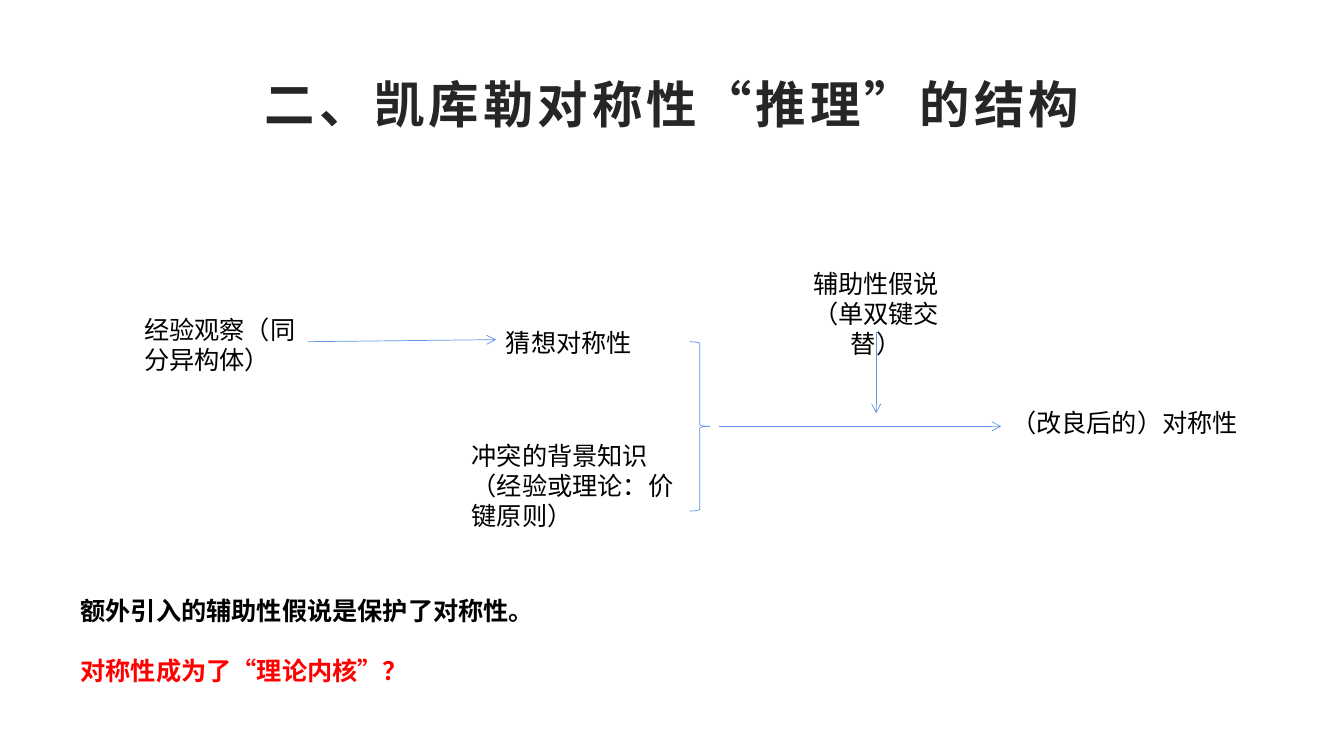
from lxml import etree
from pptx import Presentation
from pptx.dml.color import RGBColor
from pptx.enum.shapes import MSO_CONNECTOR, MSO_SHAPE
from pptx.enum.text import MSO_ANCHOR, PP_ALIGN
from pptx.oxml.ns import qn
from pptx.util import Inches, Pt

LEFT, CENTER = PP_ALIGN.LEFT, PP_ALIGN.CENTER
TOP, MIDDLE = MSO_ANCHOR.TOP, MSO_ANCHOR.MIDDLE
STRAIGHT = MSO_CONNECTOR.STRAIGHT
RIGHT_BRACE = MSO_SHAPE.RIGHT_BRACE

COLORS = {"title": "262626", "text": "000000", "accent": "FF0000", "line": "6096E6"}
EAST_ASIAN_FONT = "Noto Sans CJK SC"
SLIDE_SIZE = (13.33, 7.5)
LINE_WIDTH = 0.5
LINE_HEIGHT = 21.5

TITLE = ("二、凯库勒对称性“推理”的结构", (0.67, 0.64, 12, 0.77))
STEPS = [
    ("经验观察（同分异构体）", (1.33, 3.04, 1.72, 0.71), LEFT),
    ("猜想对称性", (4.92, 3.17, 2.25, 0.4), LEFT),
    ("冲突的背景知识（经验或理论：价键原则）", (4.58, 4.29, 2.25, 1.01), LEFT),
    ("辅助性假说（单双键交替）", (7.8, 2.58, 1.78, 0.71), CENTER),
    ("（改良后的）对称性", (9.93, 3.96, 2.5, 0.4), LEFT),
]
CONCLUSIONS = [
    ("额外引入的辅助性假说是保护了对称性。", "text"),
    ("对称性成为了“理论内核”？", "accent"),
]
CONCLUSION_BOX = (0.7, 5.83, 11.94, 1.01)
ARROWS = [
    ((3.05, 3.39), (4.92, 3.37)),
    ((7.13, 4.23), (9.93, 4.23)),
    ((8.69, 3.29), (8.69, 4.1)),
]
BRACE_BOX = (6.84, 3.39, 0.2, 1.68)

TITLE_FONT = {"name": "Arial", "size": Pt(36), "bold": True}
STEP_FONT = {"name": "Times New Roman", "size": Pt(18), "bold": False}
CONCLUSION_FONT = {"name": EAST_ASIAN_FONT, "size": Pt(18), "bold": True}
BODY_FRAME = {"word_wrap": True, "vertical_anchor": TOP,
              "margin_top": Inches(0.08), "margin_bottom": Inches(0.02)}
TITLE_FRAME = {"word_wrap": True, "vertical_anchor": MIDDLE}
BODY_PARAGRAPH = {"line_spacing": Pt(LINE_HEIGHT)}


def apply(target, values):
    for name, value in values.items():
        setattr(target, name, value)


def inches(values):
    return [Inches(value) for value in values]


def add_text(slide, box, lines, font, frame_format, paragraph_format):
    frame = slide.shapes.add_textbox(*inches(box)).text_frame
    apply(frame, frame_format)
    runs = []
    for index, (text, color) in enumerate(lines):
        paragraph = frame.add_paragraph() if index else frame.paragraphs[0]
        apply(paragraph, paragraph_format)
        if index:
            paragraph.space_before = Pt(LINE_HEIGHT)
        run = paragraph.add_run()
        run.text = text
        apply(run.font, font)
        run.font.color.rgb = RGBColor.from_string(COLORS[color])
        properties = run.font._element
        properties.set("lang", "zh-CN")
        etree.SubElement(properties, qn("a:ea"), typeface=EAST_ASIAN_FONT)
        runs.append(run)
    return runs


def style_line(line):
    line.color.rgb = RGBColor.from_string(COLORS["line"])
    line.width = Pt(LINE_WIDTH)


def add_arrow(slide, start, end):
    arrow = slide.shapes.add_connector(STRAIGHT, *inches(start + end))
    style_line(arrow.line)
    etree.SubElement(arrow.line._get_or_add_ln(), qn("a:tailEnd"), type="arrow")
    etree.SubElement(arrow._element.spPr, qn("a:effectLst"))


def add_brace(slide):
    brace = slide.shapes.add_shape(RIGHT_BRACE, *inches(BRACE_BOX))
    brace.shadow.inherit = False
    brace.fill.background()
    style_line(brace.line)


def main():
    presentation = Presentation()
    presentation.slide_width, presentation.slide_height = inches(SLIDE_SIZE)
    slide = presentation.slides.add_slide(presentation.slide_layouts[6])

    title, title_box = TITLE
    title_runs = add_text(slide, title_box, [(title, "title")], TITLE_FONT,
                          TITLE_FRAME, {"alignment": CENTER})
    title_runs[0].font._element.set("spc", "300")
    for text, box, alignment in STEPS:
        add_text(slide, box, [(text, "text")], STEP_FONT, BODY_FRAME,
                 {**BODY_PARAGRAPH, "alignment": alignment})
    for start, end in ARROWS:
        add_arrow(slide, start, end)
    add_text(slide, CONCLUSION_BOX, CONCLUSIONS, CONCLUSION_FONT, BODY_FRAME,
             BODY_PARAGRAPH)
    add_brace(slide)

    presentation.save("out.pptx")


if __name__ == "__main__":
    main()
